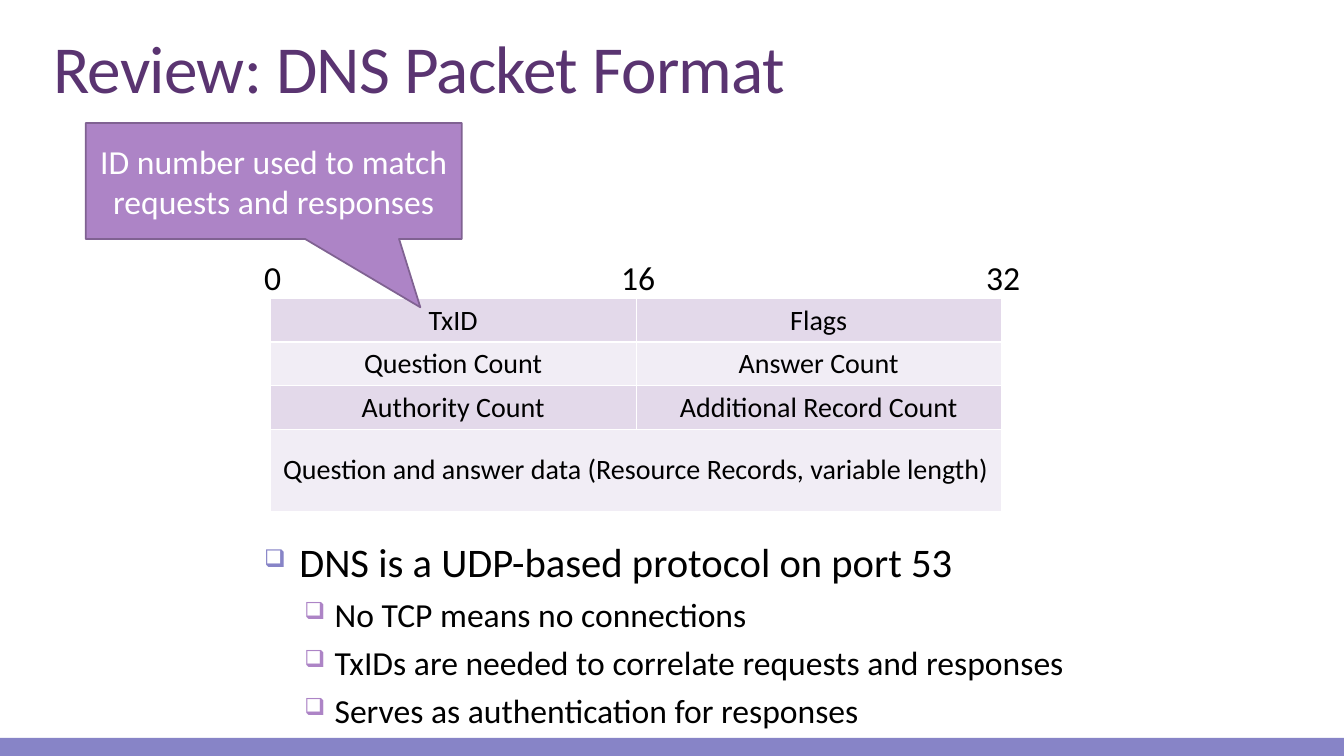
from pptx import Presentation
from pptx.dml.color import RGBColor
from pptx.enum.shapes import MSO_SHAPE
from pptx.enum.text import MSO_ANCHOR, PP_ALIGN
from pptx.oxml import parse_xml
from pptx.oxml.ns import nsdecls
from pptx.util import Inches, Pt

HUES = {
    "page": "FFFFFF", "bar": "8784C7", "title": "5A3471", "text": "000000",
    "call": "AD84C6", "edge": "806292", "dark": "E3D9EA", "light": "F1EDF5",
}
FONT = "Calibri"


def hue(name):
    return RGBColor.from_string(HUES[name])


class Deck:
    """Holds the style and the current slide."""

    def __init__(self):
        self.file = Presentation()
        self.file.slide_width = Inches(13.33)
        self.file.slide_height = Inches(7.5)
        self.slide = self.file.slides.add_slide(self.file.slide_layouts[6])
        self.slide.background.fill.solid()
        self.slide.background.fill.fore_color.rgb = hue("page")

    def run(self, para, text, size, color="text", align=None):
        run = para.add_run()
        run.text = text
        run.font.size = Pt(size)
        run.font.name = FONT
        run.font.color.rgb = hue(color)
        para.alignment = align
        return run

    def box(self, spot, wrap=True, anchor=MSO_ANCHOR.TOP):
        frame = self.slide.shapes.add_textbox(*map(Inches, spot)).text_frame
        frame.word_wrap = wrap
        frame.vertical_anchor = anchor
        return frame

    def title(self, text, spot):
        para = self.box(spot, anchor=MSO_ANCHOR.BOTTOM).paragraphs[0]
        para.line_spacing = 0.85
        run = self.run(para, text, 48, "title")
        run.font._element.set("spc", "-50")

    def label(self, text, spot):
        para = self.box(spot, wrap=False).paragraphs[0]
        self.run(para, text, 24, align=PP_ALIGN.CENTER)

    def shape(self, kind, spot, fill, edge=None):
        shape = self.slide.shapes.add_shape(kind, *map(Inches, spot))
        shape.shadow.inherit = False
        shape.fill.solid()
        shape.fill.fore_color.rgb = hue(fill)
        if edge:
            shape.line.color.rgb = hue(edge)
            shape.line.width = Pt(1.25)
        else:
            shape.line.fill.background()
        return shape

    def callout(self, text, spot, tip):
        shape = self.shape(MSO_SHAPE.RECTANGULAR_CALLOUT, spot, "call", "edge")
        for i, part in enumerate(tip):
            shape.adjustments[i] = part
        frame = shape.text_frame
        frame.word_wrap = True
        frame.vertical_anchor = MSO_ANCHOR.MIDDLE
        self.run(frame.paragraphs[0], text, 24, "page", PP_ALIGN.CENTER)

    def cell(self, cell, fill):
        """Give a cell white borders, a fill and centred height."""
        props = cell._tc.get_or_add_tcPr()
        for side in ("lnL", "lnR", "lnT", "lnB"):
            props.append(parse_xml(
                f'<a:{side} {nsdecls("a")} w="12700"><a:solidFill>'
                f'<a:srgbClr val="{HUES["page"]}"/></a:solidFill></a:{side}>'))
        cell.fill.solid()
        cell.fill.fore_color.rgb = hue(fill)
        cell.vertical_anchor = MSO_ANCHOR.MIDDLE

    def table(self, rows, spot, widths, heights):
        grid = self.slide.shapes.add_table(
            len(rows), len(widths), *map(Inches, spot)).table
        grid.first_row = grid.horz_banding = False
        for col, width in zip(grid.columns, widths):
            col.width = Inches(width)
        for r, (texts, height) in enumerate(zip(rows, heights)):
            grid.rows[r].height = Inches(height)
            for c in range(len(widths)):
                self.cell(grid.cell(r, c), ("dark", "light")[r % 2])
            for c, text in enumerate(texts):
                self.run(grid.cell(r, c).text_frame.paragraphs[0],
                         text, 20, align=PP_ALIGN.CENTER)
            if len(texts) < len(widths):
                grid.cell(r, 0).merge(grid.cell(r, len(widths) - 1))

    def bullet(self, para, color, scale, left, hang):
        props = para._p.get_or_add_pPr()
        props.set("marL", str(Inches(left)))
        props.set("indent", str(-Inches(hang)))
        for body in (f'buClr {nsdecls("a")}><a:srgbClr val="{HUES[color]}"/></a:buClr',
                     f'buSzPct {nsdecls("a")} val="{scale * 1000}"/',
                     f'buChar {nsdecls("a")} char="❑"/'):
            props.append(parse_xml(f"<a:{body}>"))

    def points(self, head, items, spot):
        frame = self.box(spot)
        para = frame.paragraphs[0]
        self.bullet(para, "bar", 60, 0.35, 0.35)
        self.run(para, head, 29)
        for item in items:
            para = frame.add_paragraph()
            para.level = 1
            self.bullet(para, "call", 70, 0.7, 0.3)
            para.space_before = Pt(5.5)
            self.run(para, item, 24)


def main():
    deck = Deck()
    deck.shape(MSO_SHAPE.RECTANGLE, (0, 7.32, 13.33, 0.18), "bar")
    deck.title("Review: DNS Packet Format", (0.43, 0.31, 12.64, 0.8))
    deck.table(
        [("TxID", "Flags"),
         ("Question Count", "Answer Count"),
         ("Authority Count", "Additional Record Count"),
         ("Question and answer data (Resource Records, variable length)",)],
        (2.68, 2.96, 7.26, 2.11), (3.63, 3.62), (0.41, 0.41, 0.41, 0.81))
    for bit, left, width in (("0", 2.52, 0.37), ("16", 6.06, 0.54),
                             ("32", 9.68, 0.54)):
        deck.label(bit, (left, 2.5, width, 0.5))
    deck.callout("ID number used to match requests and responses",
                 (0.85, 1.22, 3.73, 1.15), (0.39, 1.09))
    deck.points("DNS is a UDP-based protocol on port 53",
                ("No TCP means no connections",
                 "TxIDs are needed to correlate requests and responses",
                 "Serves as authentication for responses"),
                (2.52, 5.28, 9.11, 2.06))
    deck.file.save("out.pptx")


if __name__ == "__main__":
    main()
